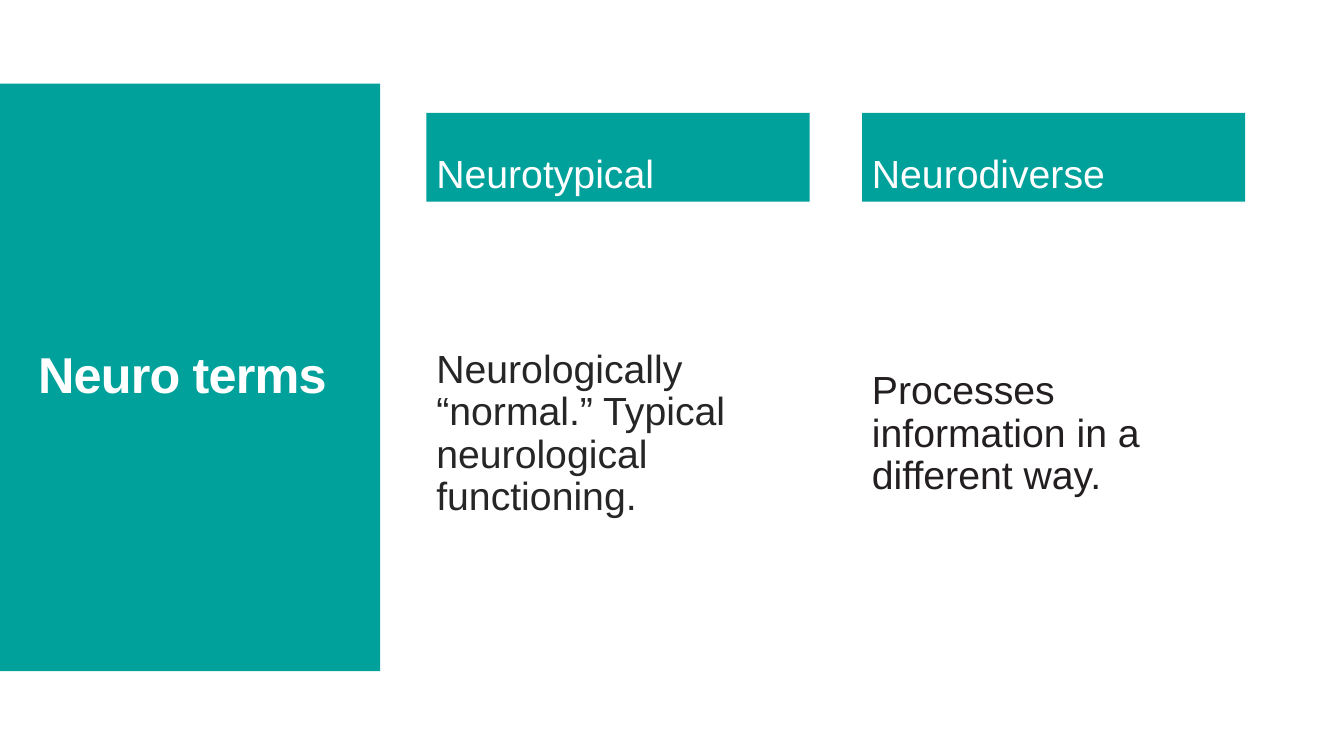
from pptx import Presentation
from pptx.dml.color import RGBColor
from pptx.enum.shapes import MSO_SHAPE as SHAPE
from pptx.enum.text import MSO_ANCHOR as ANCHOR, PP_ALIGN as ALIGN
from pptx.util import Inches, Pt

THEME = {
    "font": "Arial",
    "teal": RGBColor.from_string("00A19B"),
    "white": RGBColor.from_string("FFFFFF"),
    "ink": RGBColor.from_string("231F20"),
    "gray": RGBColor.from_string("262626"),
    "title": Pt(36),
    "body": Pt(28),
}
COL_LEFT, COL_WIDTH, COL_STEP = 4.23, 3.8, 4.32
HEAD_TOP, HEAD_HEIGHT = 1.12, 0.88
BODY_TOP, BODY_HEIGHT = 2.11, 4.4
COLUMNS = [
    ("Neurotypical", "Neurologically “normal.” Typical neurological functioning.", "gray"),
    ("Neurodiverse", "Processes information in a different way.", "ink"),
]

prs = Presentation()
prs.slide_width, prs.slide_height = Inches(13.33), Inches(7.5)
slide = prs.slides.add_slide(prs.slide_layouts[6])


def add_panel(*box):
    s = slide.shapes.add_shape(SHAPE.RECTANGLE, *map(Inches, box))
    s.shadow.inherit = False
    s.fill.solid()
    s.fill.fore_color.rgb = THEME["teal"]
    s.line.fill.background()
    return s


def write(s, text, anchor, color, size="body", bold=False, before=0):
    tf = s.text_frame
    tf.word_wrap = True
    tf.vertical_anchor = anchor
    p = tf.paragraphs[0]
    for name, value in {"alignment": ALIGN.LEFT, "line_spacing": 0.9,
                        "space_before": Pt(before)}.items():
        setattr(p, name, value)
    r = p.add_run()
    r.text = text
    for name, value in {"name": THEME["font"], "size": THEME[size], "bold": bold}.items():
        setattr(r.font, name, value)
    r.font.color.rgb = THEME[color]
    return r


add_panel(0, 0.83, 3.77, 5.83)
title = slide.shapes.add_textbox(*map(Inches, (0.28, 1.23, 3.22, 5.03)))
r = write(title, "Neuro terms", ANCHOR.MIDDLE, "white", "title", bold=True)
r.font._element.set("spc", "-60")  # letter spacing in 1/100 pt

for i, (term, meaning, color) in enumerate(COLUMNS):
    left = COL_LEFT + i * COL_STEP
    write(add_panel(left, HEAD_TOP, COL_WIDTH, HEAD_HEIGHT), term, ANCHOR.BOTTOM, "white")
    body = slide.shapes.add_textbox(*map(Inches, (left, BODY_TOP, COL_WIDTH, BODY_HEIGHT)))
    write(body, meaning, ANCHOR.MIDDLE, color, before=12)

prs.save("out.pptx")
